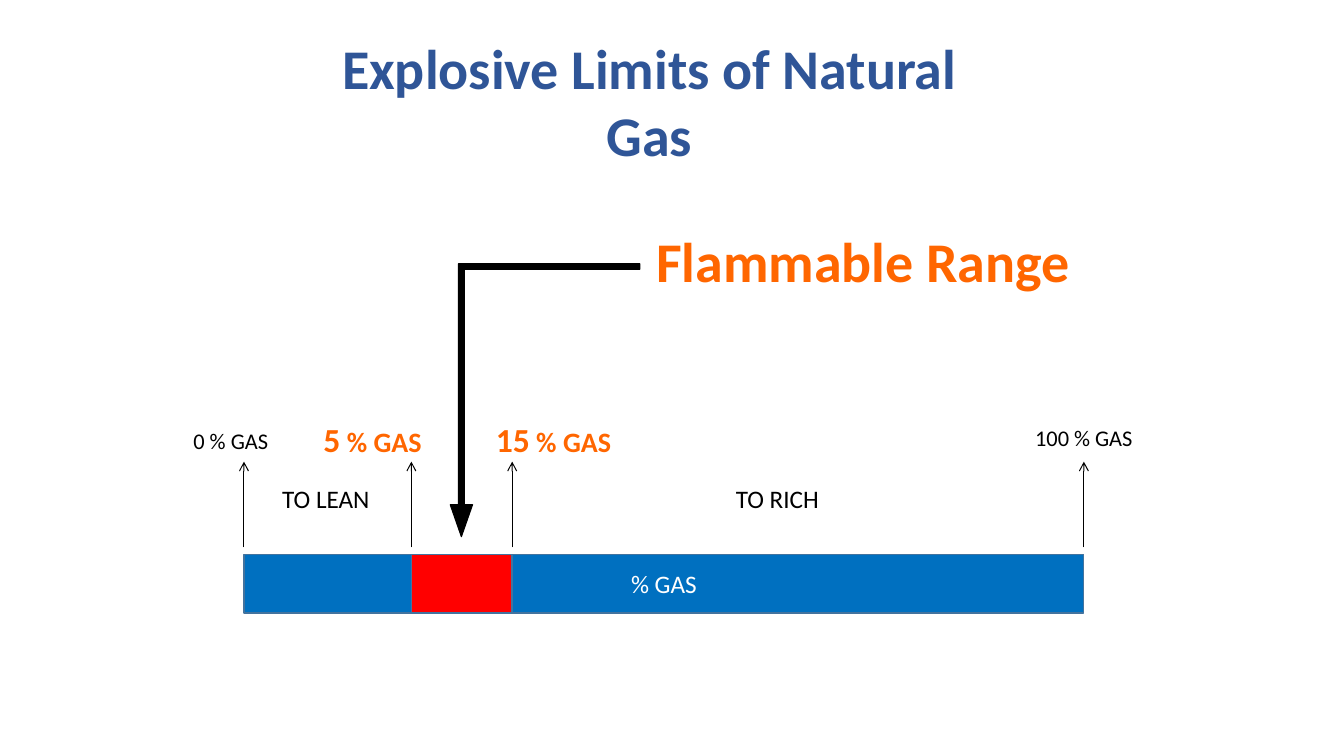
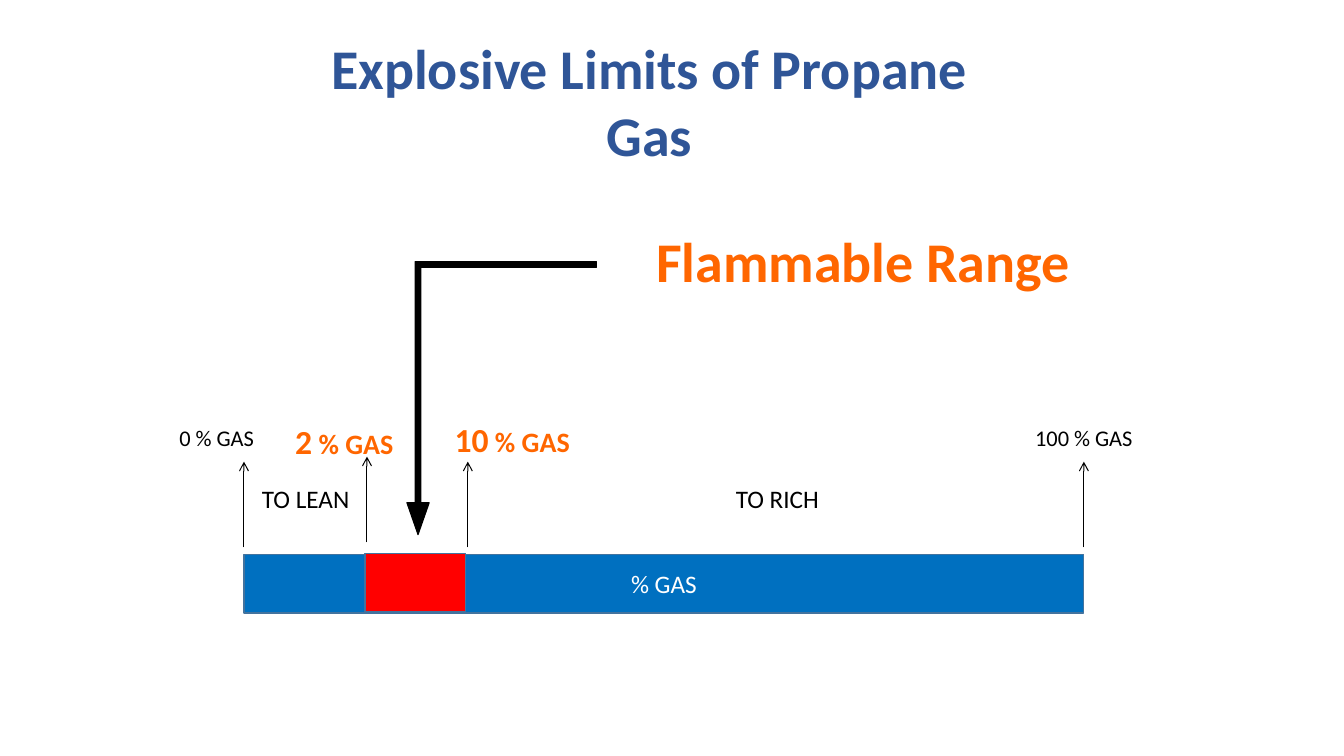
"""Build two slides on the explosive limits of natural gas and propane gas."""
from dataclasses import dataclass

from lxml.etree import SubElement
from pptx import Presentation
from pptx.dml.color import RGBColor
from pptx.enum.shapes import MSO_CONNECTOR as Connector, MSO_SHAPE as Shape
from pptx.enum.text import MSO_ANCHOR as Anchor, MSO_AUTO_SIZE as AutoSize, PP_ALIGN as Align
from pptx.oxml.ns import qn
from pptx.util import Inches, Pt


@dataclass(frozen=True)
class Theme:
    font: str = "Calibri"
    title: str = "2F5597"
    accent: str = "FF6600"
    ink: str = "000000"
    paper: str = "FFFFFF"
    scale: str = "0070C0"
    danger: str = "FF0000"
    outline: str = "43739E"
    heading_size: int = 40
    limit_size: int = 24
    unit_size: int = 20
    zone_size: int = 18
    end_size: int = 16


theme = Theme()


def write(shape, box, runs, align=Align.LEFT, anchor=Anchor.TOP):
    for side, length in zip(("left", "top", "width", "height"), box):
        setattr(shape, side, Inches(length))
    frame = shape.text_frame
    frame_format = {"word_wrap": True, "auto_size": AutoSize.NONE, "vertical_anchor": anchor}
    for attribute, value in frame_format.items():
        setattr(frame, attribute, value)
    paragraph = frame.paragraphs[0]
    paragraph.alignment = align
    for text, size, color, bold in runs:
        run = paragraph.add_run()
        run.text = text
        font_format = {"name": theme.font, "size": Pt(size), "bold": bold}
        for attribute, value in font_format.items():
            setattr(run.font, attribute, value)
        run.font.color.rgb = RGBColor.from_string(color)


def add_filled(slide, preset, box, fill, line, weight):
    shape = slide.shapes.add_shape(preset, *map(Inches, box))
    shape.shadow.inherit = False
    shape.fill.solid()
    shape.fill.fore_color.rgb = RGBColor.from_string(fill)
    shape.line.color.rgb = RGBColor.from_string(line)
    shape.line.width = Pt(weight)
    return shape


scale_left, scale_top, scale_width, scale_height = 2.42, 5.5, 8.33, 0.58
scale_right = scale_left + scale_width
marker_bottom, marker_height = 5.43, 0.85
title_box = (2.97, 0.28, 6.94, 1.45)
range_box = (6.41, 2.2, 4.6, 0.77)

gases = [
    {
        "title": "Explosive Limits of Natural Gas",
        "range": (4.08, 5.5),
        "markers": [(4.08, 0), (5.08, 0)],
        "limits": [("5", 3.11, 4.11), ("15", 4.82, 4.11)],
        "zero": (1.82, 4.19),
        "lean": 2.7,
        "pointer": (4.05, 3.03),
    },
    {
        "title": "Explosive Limits of Propane Gas",
        "range": (3.62, 5.49),
        "markers": [(3.64, 0.05), (4.64, 0)],
        "limits": [("2", 2.83, 4.13), ("10", 4.41, 4.11)],
        "zero": (1.68, 4.16),
        "lean": 2.5,
        "pointer": (3.62, 3.01),
    },
]

deck = Presentation()
deck.slide_width, deck.slide_height = Inches(13.33), Inches(7.5)

for gas in gases:
    slide = deck.slides.add_slide(deck.slide_layouts[5])
    write(slide.shapes.title, title_box,
          [(gas["title"], theme.heading_size, theme.title, True)], Align.CENTER)

    scale_box = (scale_left, scale_top, scale_width, scale_height)
    scale = add_filled(slide, Shape.RECTANGLE, scale_box, theme.scale, theme.outline, 1)
    write(scale, scale_box, [("% GAS", theme.zone_size, theme.paper, False)],
          Align.CENTER, Anchor.MIDDLE)
    add_filled(slide, Shape.RECTANGLE, (*gas["range"], 1, scale_height),
               theme.danger, theme.outline, 1)

    for x, lift in [(scale_left, 0), *gas["markers"], (scale_right, 0)]:
        bottom = marker_bottom - lift
        marker = slide.shapes.add_connector(
            Connector.STRAIGHT, Inches(x), Inches(bottom), Inches(x), Inches(bottom - marker_height))
        marker.line.color.rgb = RGBColor.from_string(theme.ink)
        marker.line.width = Pt(0.75)
        SubElement(marker.line._get_or_add_ln(), qn("a:tailEnd"), type="arrow")
        SubElement(marker._element.spPr, qn("a:effectLst"))

    labels = [
        ((10.05, 4.16, 1.4, 0.37), [("100 % GAS", theme.end_size, theme.ink, False)], Align.CENTER),
        ((*gas["zero"], 1.1, 0.37), [("0 % GAS", theme.end_size, theme.ink, False)], Align.LEFT),
        ((7.2, 4.75, 1.2, 0.4), [("TO RICH", theme.zone_size, theme.ink, False)], Align.LEFT),
        ((gas["lean"], 4.75, 1.2, 0.4), [("TO LEAN", theme.zone_size, theme.ink, False)], Align.LEFT),
        (range_box, [("Flammable Range", theme.heading_size, theme.accent, True)], Align.LEFT),
    ]
    for percent, left, top in gas["limits"]:
        limit_runs = [(percent, theme.limit_size, theme.accent, True),
                      (" % GAS", theme.unit_size, theme.accent, True)]
        labels.append(((left, top, 1.5, 0.5), limit_runs, Align.LEFT))
    for box, runs, align in labels:
        write(slide.shapes.add_textbox(*map(Inches, box)), box, runs, align)

    pointer = add_filled(slide, Shape.BENT_ARROW, (*gas["pointer"], 2.71, 1.88),
                         theme.ink, theme.ink, 0.75)
    pointer.rotation = 270
    pointer._element.spPr.xfrm.set("flipH", "1")
    for index, ratio in enumerate((0.031, 0.059, 0.169, 0)):
        pointer.adjustments[index] = ratio

deck.save("out.pptx")
